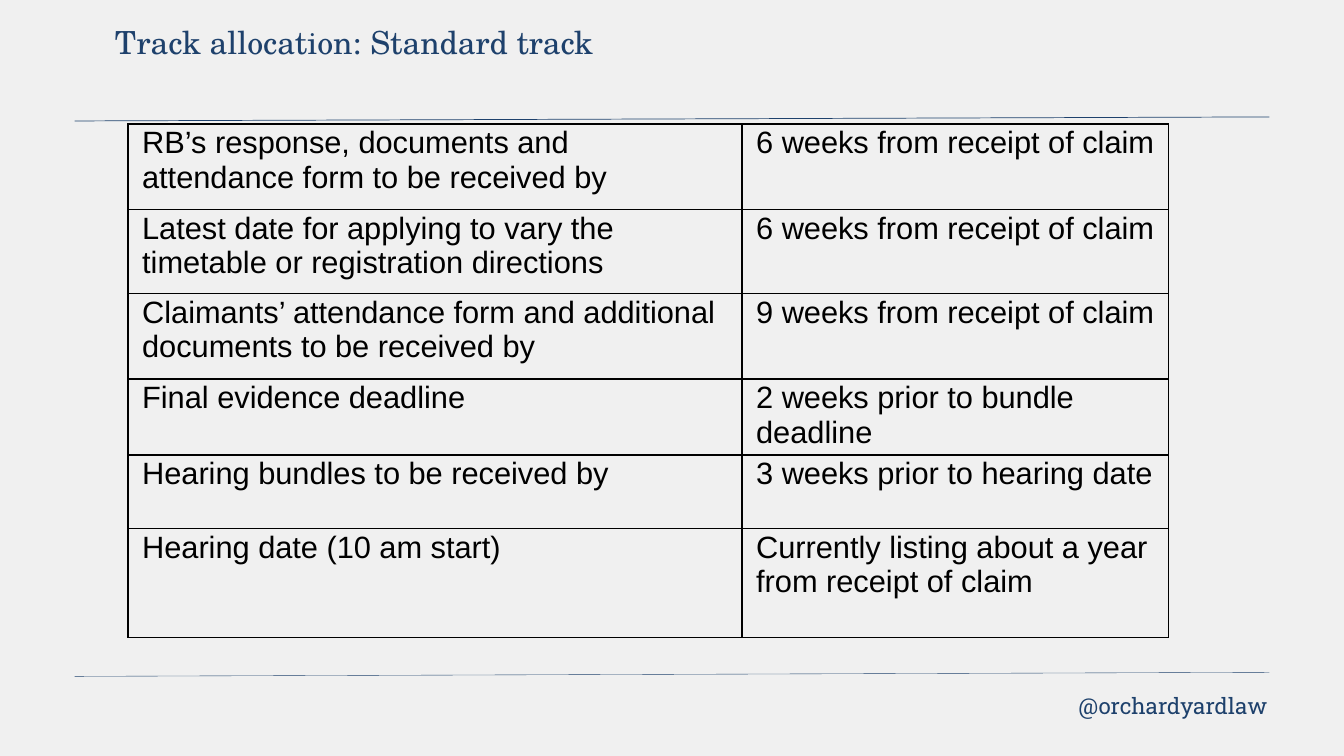
from lxml.etree import SubElement
from pptx import Presentation
from pptx.dml.color import RGBColor
from pptx.enum.shapes import MSO_CONNECTOR
from pptx.enum.text import MSO_ANCHOR, MSO_AUTO_SIZE, PP_ALIGN
from pptx.oxml.ns import qn
from pptx.util import Inches, Pt

TITLE = "Track allocation: Standard track"
HANDLE = "@orchardyardlaw"
TIMETABLE = [
    ("RB’s response, documents and attendance form to be received by", "6 weeks from receipt of claim", 0.85),
    ("Latest date for applying to vary the timetable or registration directions", "6 weeks from receipt of claim", 0.83),
    ("Claimants’ attendance form and additional documents to be received by", "9 weeks from receipt of claim", 0.85),
    ("Final evidence deadline", "2 weeks prior to bundle deadline", 0.73),
    ("Hearing bundles to be received by", "3 weeks prior to hearing date", 0.73),
    ("Hearing date (10 am start)", "Currently listing about a year from receipt of claim", 1.08),
]
COLUMN_WIDTHS = (6.09, 4.23)
RULES = [(1.2, 1.16, 0.5), (6.71, 6.67, 0.25)]
RULE_LEFT, RULE_RIGHT = 0.74, 12.59

NAVY = RGBColor.from_string("1E416C")
THEME = {
    "background": RGBColor.from_string("F0F0F0"),
    "rule": NAVY,
    "border": "000000",
    "border_width": Pt(1),
    "title": {"name": "TeX Gyre Schola", "size": Pt(22.7), "color": NAVY},
    "handle": {"name": "Roboto Slab", "size": Pt(16), "color": NAVY},
    "cell": {"name": "Arial", "size": Pt(22), "color": RGBColor(0, 0, 0)},
}
TITLE_FRAME = {
    "auto_size": MSO_AUTO_SIZE.NONE,
    "word_wrap": True,
    "vertical_anchor": MSO_ANCHOR.TOP,
    "margin_left": Inches(0.1),
    "margin_right": Inches(0.1),
    "margin_top": Inches(0.05),
    "margin_bottom": Inches(0.05),
}
CELL_FORMAT = {
    "vertical_anchor": MSO_ANCHOR.TOP,
    "margin_left": Inches(0.14),
    "margin_right": Inches(0.14),
    "margin_top": Inches(0.02),
    "margin_bottom": 0,
}


def apply(target, values):
    for name, value in values.items():
        setattr(target, name, value)


def write(frame, text, style):
    para = frame.paragraphs[0]
    span = para.add_run()
    span.text = text
    apply(span.font, {"name": style["name"], "size": style["size"]})
    span.font.color.rgb = style["color"]
    return para


def place(shape, left, top, width, height):
    apply(shape, {"left": Inches(left), "top": Inches(top), "width": Inches(width), "height": Inches(height)})


def add_rule(page, start, end, weight):
    rule = page.shapes.add_connector(
        MSO_CONNECTOR.STRAIGHT, Inches(RULE_LEFT), Inches(start), Inches(RULE_RIGHT), Inches(end)
    )
    rule.line.color.rgb = THEME["rule"]
    rule.line.width = Pt(weight)
    SubElement(rule._element.spPr, qn("a:effectLst"))


def add_borders(cell):
    properties = cell._tc.get_or_add_tcPr()
    for side in ("lnL", "lnR", "lnT", "lnB"):
        border = SubElement(properties, qn(f"a:{side}"), w=str(THEME["border_width"]))
        fill = SubElement(border, qn("a:solidFill"))
        SubElement(fill, qn("a:srgbClr"), val=THEME["border"])


def add_title(page):
    title = page.shapes.title
    place(title, 1.04, 0.28, 7.1, 0.39)
    apply(title.text_frame, TITLE_FRAME)
    para = write(title.text_frame, TITLE, THEME["title"])
    apply(para, {"alignment": PP_ALIGN.LEFT, "line_spacing": 0.7, "space_before": Pt(0)})


def add_handle(page):
    box = page.shapes.add_textbox(Inches(10.6), Inches(6.82), Inches(2.52), Inches(0.37))
    box.text_frame.word_wrap = True
    write(box.text_frame, HANDLE, THEME["handle"])


def add_timetable(page):
    height = sum(row[-1] for row in TIMETABLE)
    table = page.shapes.add_table(
        len(TIMETABLE), len(COLUMN_WIDTHS), Inches(1.27), Inches(1.23), Inches(sum(COLUMN_WIDTHS)), Inches(height)
    ).table
    apply(table, {"first_row": False, "horz_banding": False})
    for column, width in zip(table.columns, COLUMN_WIDTHS):
        column.width = Inches(width)
    for row, (*texts, row_height) in zip(table.rows, TIMETABLE):
        row.height = Inches(row_height)
        for cell, text in zip(row.cells, texts):
            apply(cell, CELL_FORMAT)
            add_borders(cell)
            cell.fill.background()
            write(cell.text_frame, text, THEME["cell"])


def main():
    deck = Presentation()
    apply(deck, {"slide_width": Inches(13.33), "slide_height": Inches(7.5)})
    page = deck.slides.add_slide(deck.slide_layouts[5])
    page.background.fill.solid()
    page.background.fill.fore_color.rgb = THEME["background"]
    for start, end, weight in RULES:
        add_rule(page, start, end, weight)
    add_handle(page)
    add_title(page)
    add_timetable(page)
    deck.save("out.pptx")


if __name__ == "__main__":
    main()
